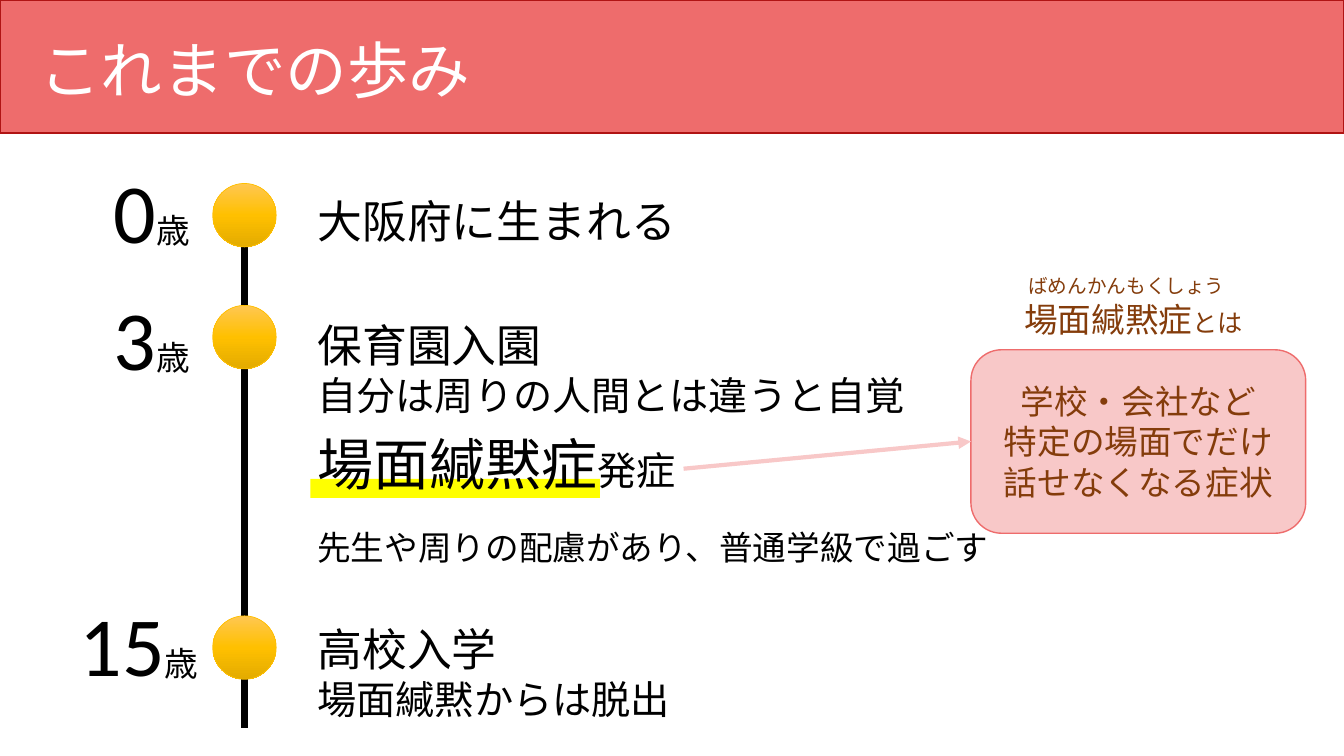
import copy
from dataclasses import dataclass

import pptx
import pptx.util
from lxml import etree
from pptx.dml.color import RGBColor
from pptx.enum.shapes import MSO_CONNECTOR, MSO_SHAPE
from pptx.enum.text import MSO_ANCHOR, MSO_AUTO_SIZE, PP_ALIGN
from pptx.oxml.ns import qn
from pptx.util import Inches


@dataclass(frozen=True)
class Theme:
    font: str = "Calibri"
    ink: str = "000000"
    paper: str = "FFFFFF"
    coral: str = "EE6C6C"
    crimson: str = "B01414"
    blush: str = "F8C8C8"
    brown: str = "843C0B"
    marker: str = "FFFF00"
    amber: str = "FFC000"
    amber_stops: tuple = ("FFC752", "FFC000", "E3AB00")
    title: int = 44
    age: int = 60
    keyword: int = 40
    event: int = 32
    detail: int = 28
    note: int = 24
    suffix: int = 18
    ruby: int = 14


THEME = Theme()


def rgb(value):
    return RGBColor.from_string(value)


def write(frame, lines, color=THEME.ink, align=PP_ALIGN.LEFT):
    """Fill a frame; each line is a list of (words, size) runs."""
    frame.word_wrap = True
    for index, line in enumerate(lines):
        paragraph = frame.paragraphs[0] if index == 0 else frame.add_paragraph()
        paragraph.alignment = align
        for words, size in line:
            run = paragraph.add_run()
            run.text = words
            run.font.size = pptx.util.Pt(size)
            run.font.name = THEME.font
            run.font.color.rgb = rgb(color)


def add_text(slide, box, lines, color=THEME.ink):
    frame = slide.shapes.add_textbox(*map(Inches, box)).text_frame
    write(frame, lines, color)
    frame.auto_size = MSO_AUTO_SIZE.SHAPE_TO_FIT_TEXT


def add_block(slide, preset, box, fill=None, line=None, width=1):
    block = slide.shapes.add_shape(preset, *map(Inches, box))
    block.shadow.inherit = False
    if fill:
        block.fill.solid()
        block.fill.fore_color.rgb = rgb(fill)
    if line:
        block.line.color.rgb = rgb(line)
        block.line.width = pptx.util.Pt(width)
    else:
        block.line.fill.background()
    return block


def add_line(slide, start, end, color, width):
    line = slide.shapes.add_connector(
        MSO_CONNECTOR.STRAIGHT, *map(Inches, (*start, *end)))
    line.line.color.rgb = rgb(color)
    line.line.width = pptx.util.Pt(width)
    etree.SubElement(line._element.spPr, qn("a:effectLst"))
    return line


def add_header(slide, box, heading):
    left, top, width, height = box
    band = add_block(slide, MSO_SHAPE.RECTANGLE, box, THEME.coral, THEME.crimson)
    slide.shapes._spTree.insert(2, band._element)
    title = slide.shapes.title
    title.left, title.top = Inches(left + 0.29), Inches(top)
    title.width, title.height = Inches(11.5), Inches(height + 0.13)
    title.text_frame.vertical_anchor = MSO_ANCHOR.MIDDLE
    write(title.text_frame, [[(heading, THEME.title)]], THEME.paper)
    title.text_frame.paragraphs[0].line_spacing = 0.9


def add_milestone_dot(slide, box):
    dot = add_block(slide, MSO_SHAPE.OVAL, box, line=THEME.amber, width=0.5)
    dot.fill.gradient()
    dot.fill.gradient_angle = 270
    stops = dot._element.spPr.find(qn("a:gradFill")).find(qn("a:gsLst"))
    stops.insert(1, copy.deepcopy(stops[0]))
    for index, (stop, color) in enumerate(zip(dot.fill.gradient_stops, THEME.amber_stops)):
        stop.position = index / 2
        stop.color.rgb = rgb(color)


def add_timeline(slide, box, milestones):
    """Draw the axis in the box; each milestone is (dot top, age box, event top, event lines)."""
    left, top, width, height = box
    axis = left + width / 2
    add_line(slide, (axis, top + 0.12), (axis, top + height), THEME.ink, 4.5)
    for dot_top, (age, age_left, age_top), event_top, (event, *details) in milestones:
        add_milestone_dot(slide, (left, dot_top, width, width))
        add_text(slide, (age_left, age_top, left - age_left, 1.11),
                 [[(age, THEME.age), ("歳", THEME.note)]])
        add_text(slide, (left + 0.94, event_top, 8.2, 0.64 + 0.47 * len(details)),
                 [[(event, THEME.event)]] + [[(detail, THEME.detail)] for detail in details])


def add_onset(slide, box):
    left, top, width, height = box
    add_block(slide, MSO_SHAPE.RECTANGLE, (left + 0.03, top + 0.54, 2.87, 0.19), THEME.marker)
    add_text(slide, box, [[("場面緘黙症", THEME.keyword), ("発症", THEME.detail)]])
    add_text(slide, (left, top + 0.97, 8.74, 0.5),
             [[("先生や周りの配慮があり、普通学級で過ごす", THEME.note)]])


def add_definition(slide, box, arrow_start):
    left, top, width, height = box
    meaning = add_block(slide, MSO_SHAPE.ROUNDED_RECTANGLE, box, THEME.blush, THEME.coral)
    meaning.text_frame.vertical_anchor = MSO_ANCHOR.MIDDLE
    lines = ("学校・会社など", "特定の場面でだけ", "話せなくなる症状")
    write(meaning.text_frame, [[(line, THEME.note)] for line in lines],
          THEME.brown, PP_ALIGN.CENTER)
    arrow = add_line(slide, arrow_start, (left, top + height / 2), THEME.blush, 3)
    arrow.end_connect(meaning, 1)
    etree.SubElement(arrow.line._get_or_add_ln(), qn("a:tailEnd"), type="triangle")
    add_text(slide, (left + 0.43, top - 0.55, 2.46, 0.5),
             [[("場面緘黙症", THEME.note), ("とは", THEME.suffix)]], THEME.brown)
    add_text(slide, (left + 0.47, top - 0.8, 2.46, 0.34),
             [[("ばめんかんもくしょう", THEME.ruby)]], THEME.brown)


def main():
    deck = pptx.Presentation()
    deck.slide_width, deck.slide_height = Inches(13.33), Inches(7.5)
    slide = deck.slides.add_slide(deck.slide_layouts.get_by_name("Title Only"))
    add_header(slide, (0, 0, 13.33, 1.32), "これまでの歩み")
    add_timeline(slide, (2.11, 1.82, 0.63, 5.4), [
        (1.82, ("0", 1.03, 1.53), 1.87, ["大阪府に生まれる"]),
        (3.03, ("3", 1.03, 2.79), 3.1, ["保育園入園", "自分は周りの人間とは違うと自覚"]),
        (6.11, ("15", 0.69, 5.83), 6.12, ["高校入学", "場面緘黙からは脱出"]),
    ])
    add_onset(slide, (3.05, 4.21, 6.6, 1.08))
    add_definition(slide, (9.63, 3.47, 3.32, 1.82), arrow_start=(6.78, 4.65))
    deck.save("out.pptx")


if __name__ == "__main__":
    main()
